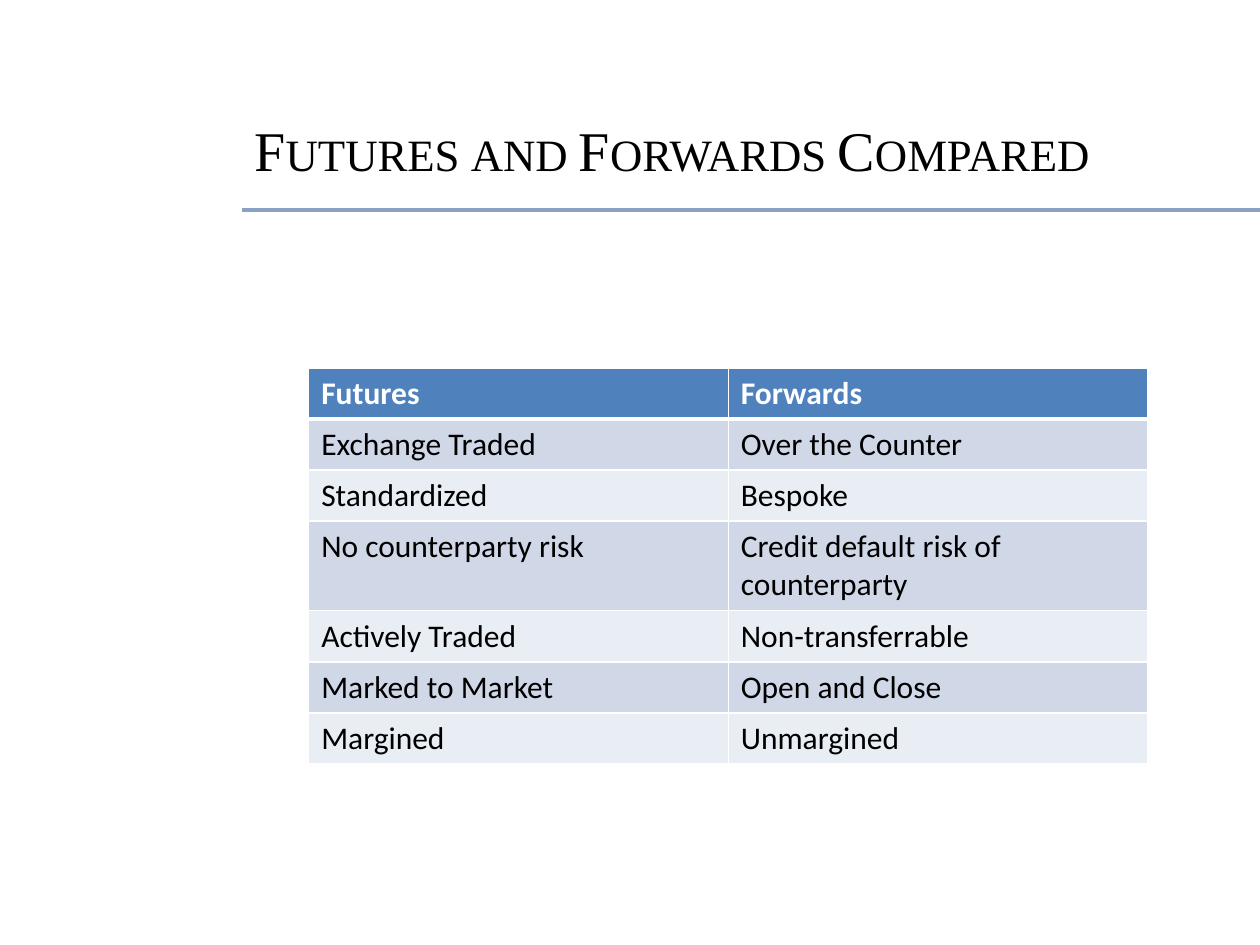
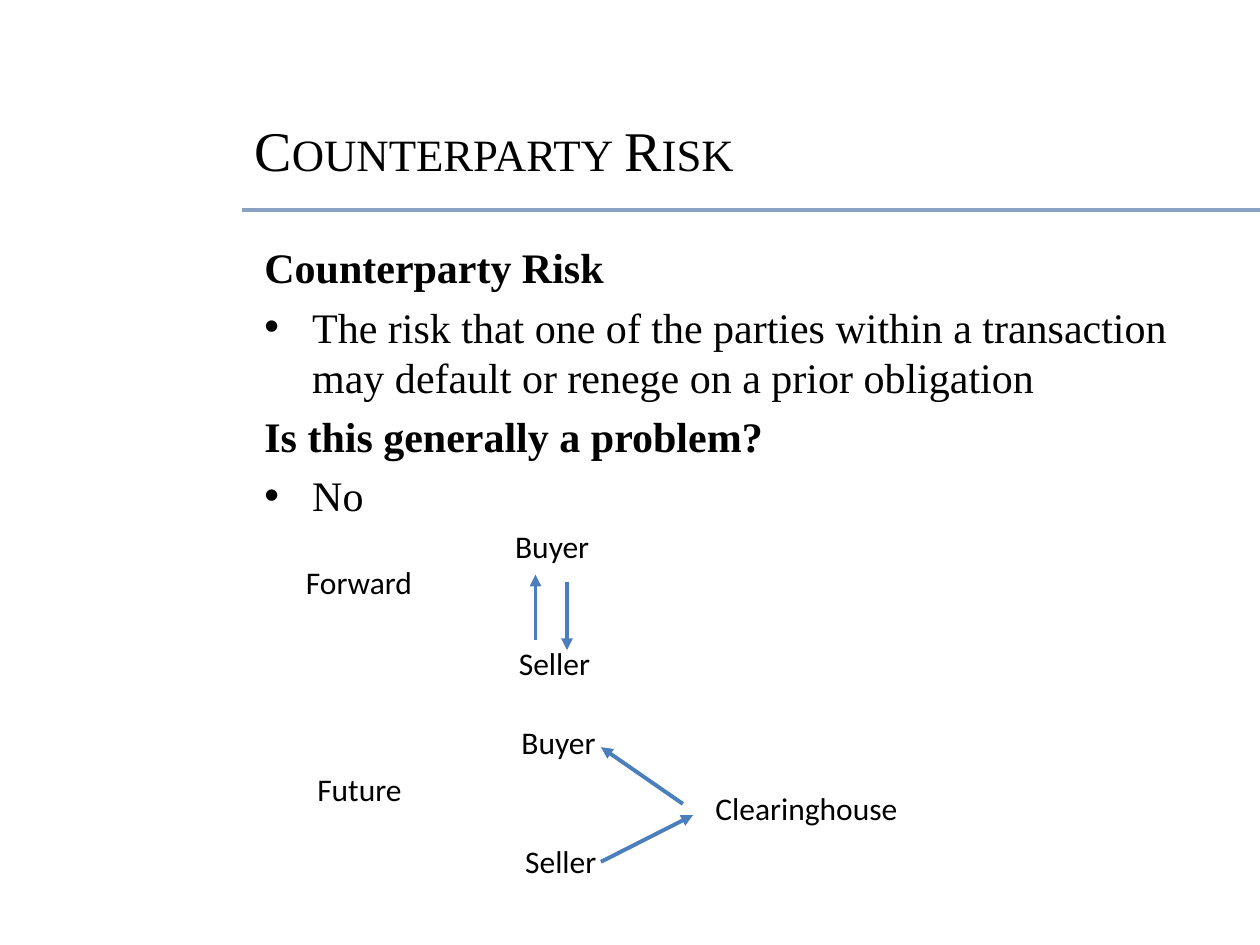
"""Build two slides that compare futures with forwards and explain counterparty risk."""
from dataclasses import dataclass

from lxml.etree import SubElement
from pptx import Presentation
from pptx.dml.color import RGBColor
from pptx.enum.shapes import MSO_CONNECTOR
from pptx.enum.text import MSO_ANCHOR, MSO_AUTO_SIZE, PP_ALIGN
from pptx.oxml.ns import qn
from pptx.util import Inches, Pt

STRAIGHT = MSO_CONNECTOR.STRAIGHT
MIDDLE = MSO_ANCHOR.MIDDLE
LEFT = PP_ALIGN.LEFT
FIXED_SIZE = MSO_AUTO_SIZE.NONE
TITLE_ONLY = 5


@dataclass(frozen=True)
class Theme:
    serif: str = "Times New Roman"
    sans: str = "Calibri"
    title_size: int = 32
    body_size: int = 24
    label_size: int = 18
    line_width: float = 2.25
    black: str = "000000"
    white: str = "FFFFFF"
    rule: str = "89A2C4"
    arrow: str = "4B7EBC"
    header: str = "4F81BD"
    bands: tuple = ("D0D8E8", "E9EDF4")


def write(paragraph, text, *, font, size, color, bold=False, small_caps=False,
          bullet=False, space_before=0):
    paragraph.alignment = LEFT
    paragraph.space_before = Pt(space_before)
    if bullet:
        properties = paragraph._p.get_or_add_pPr()
        properties.set("marL", str(Inches(0.38)))
        properties.set("indent", str(-Inches(0.38)))
        SubElement(properties, qn("a:buFont"), typeface="Arial")
        SubElement(properties, qn("a:buChar"), char="•")
    run = paragraph.add_run()
    run.text = text
    run.font.name = font
    run.font.size = Pt(size)
    run.font.bold = bold
    run.font.color.rgb = RGBColor.from_string(color)
    if small_caps:
        run.font._element.set("cap", "small")


class Deck:
    def __init__(self, theme):
        self.theme = theme
        self.presentation = Presentation()
        self.presentation.slide_width = Inches(10)
        self.presentation.slide_height = Inches(7.5)
        self.slide = None

    def start_slide(self, heading):
        layout = self.presentation.slide_layouts[TITLE_ONLY]
        self.slide = self.presentation.slides.add_slide(layout)
        self.line((1.92, 1.67), (10, 1.67), self.theme.rule)
        title = self.slide.shapes.title
        title.left, title.top = Inches(1.92), Inches(0.75)
        title.width, title.height = Inches(7.17), Inches(0.87)
        title.text_frame.vertical_anchor = MIDDLE
        title.text_frame.auto_size = FIXED_SIZE
        write(title.text_frame.paragraphs[0], heading, font=self.theme.serif,
              size=self.theme.title_size, color=self.theme.black, small_caps=True)

    def line(self, start, end, color, arrowhead=False):
        connector = self.slide.shapes.add_connector(
            STRAIGHT, *(Inches(value) for value in (*start, *end)))
        connector.line.color.rgb = RGBColor.from_string(color)
        connector.line.width = Pt(self.theme.line_width)
        properties = connector._element.spPr
        if arrowhead:
            SubElement(properties.find(qn("a:ln")), qn("a:tailEnd"), type="triangle")
        SubElement(properties, qn("a:effectLst"))

    def text_area(self, left, top, width, height):
        area = self.slide.shapes.add_textbox(
            Inches(left), Inches(top), Inches(width), Inches(height))
        area.text_frame.word_wrap = True
        return area.text_frame

    def label(self, text, left, top, width=1.17, height=0.4):
        frame = self.text_area(left, top, width, height)
        write(frame.paragraphs[0], text, font=self.theme.sans,
              size=self.theme.label_size, color=self.theme.black)

    def body(self, items, left, top, width, height):
        frame = self.text_area(left, top, width, height)
        frame.margin_top = Inches(0.09)
        for index, (text, is_heading) in enumerate(items):
            paragraph = frame.add_paragraph() if index else frame.paragraphs[0]
            write(paragraph, text, font=self.theme.serif, size=self.theme.body_size,
                  color=self.theme.black, bold=is_heading, bullet=not is_heading,
                  space_before=5 if index else 0)

    def cell_borders(self, cell, widths):
        properties = cell._tc.get_or_add_tcPr()
        for side, width in widths.items():
            border = SubElement(properties, qn(f"a:ln{side}"), w=str(Pt(width)))
            fill = SubElement(border, qn("a:solidFill"))
            SubElement(fill, qn("a:srgbClr"), val=self.theme.white)

    def table(self, rows, left, top, width, row_height):
        grid = self.slide.shapes.add_table(
            len(rows), len(rows[0]), Inches(left), Inches(top),
            Inches(width), Inches(row_height * len(rows))).table
        for row, texts in enumerate(rows):
            is_header = row == 0
            fill = self.theme.header if is_header else self.theme.bands[(row - 1) % 2]
            for column, text in enumerate(texts):
                cell = grid.cell(row, column)
                self.cell_borders(cell, {"L": 1, "R": 1, "T": 3 if row == 1 else 1,
                                         "B": 3 if is_header else 1})
                cell.fill.solid()
                cell.fill.fore_color.rgb = RGBColor.from_string(fill)
                write(cell.text_frame.paragraphs[0], text, font=self.theme.sans,
                      size=self.theme.label_size, bold=is_header,
                      color=self.theme.white if is_header else self.theme.black)


def add_comparison(deck):
    deck.start_slide("Futures and Forwards Compared")
    deck.table([
        ("Futures", "Forwards"),
        ("Exchange Traded", "Over the Counter"),
        ("Standardized", "Bespoke"),
        ("No counterparty risk", "Credit default risk of counterparty"),
        ("Actively Traded", "Non-transferrable"),
        ("Marked to Market", "Open and Close"),
        ("Margined", "Unmargined"),
    ], 2.45, 2.92, 6.66, 0.4)


def add_counterparty_risk(deck):
    deck.start_slide("Counterparty Risk")
    deck.body([
        ("Counterparty Risk", True),
        ("The risk that one of the parties within a transaction may default "
         "or renege on a prior obligation", False),
        ("Is this generally a problem?", True),
        ("No", False),
    ], 2, 1.83, 7.67, 5.17)
    for text, left, top in (
        ("Forward", 2.33, 4.42), ("Buyer", 3.99, 4.13), ("Seller", 4.02, 5.06),
        ("Future", 2.42, 6.06), ("Buyer", 4.04, 5.69), ("Seller", 4.07, 6.63),
    ):
        deck.label(text, left, top)
    deck.label("Clearinghouse", 5.58, 6.21, width=1.67, height=0.71)
    for start, end in (
        ((4.25, 5.08), (4.25, 4.56)), ((4.5, 4.62), (4.5, 5.16)),
        ((4.77, 6.84), (5.5, 6.47)), ((5.42, 6.38), (4.77, 5.93)),
    ):
        deck.line(start, end, deck.theme.arrow, arrowhead=True)


def main():
    deck = Deck(Theme())
    add_comparison(deck)
    add_counterparty_risk(deck)
    deck.presentation.save("out.pptx")


if __name__ == "__main__":
    main()
